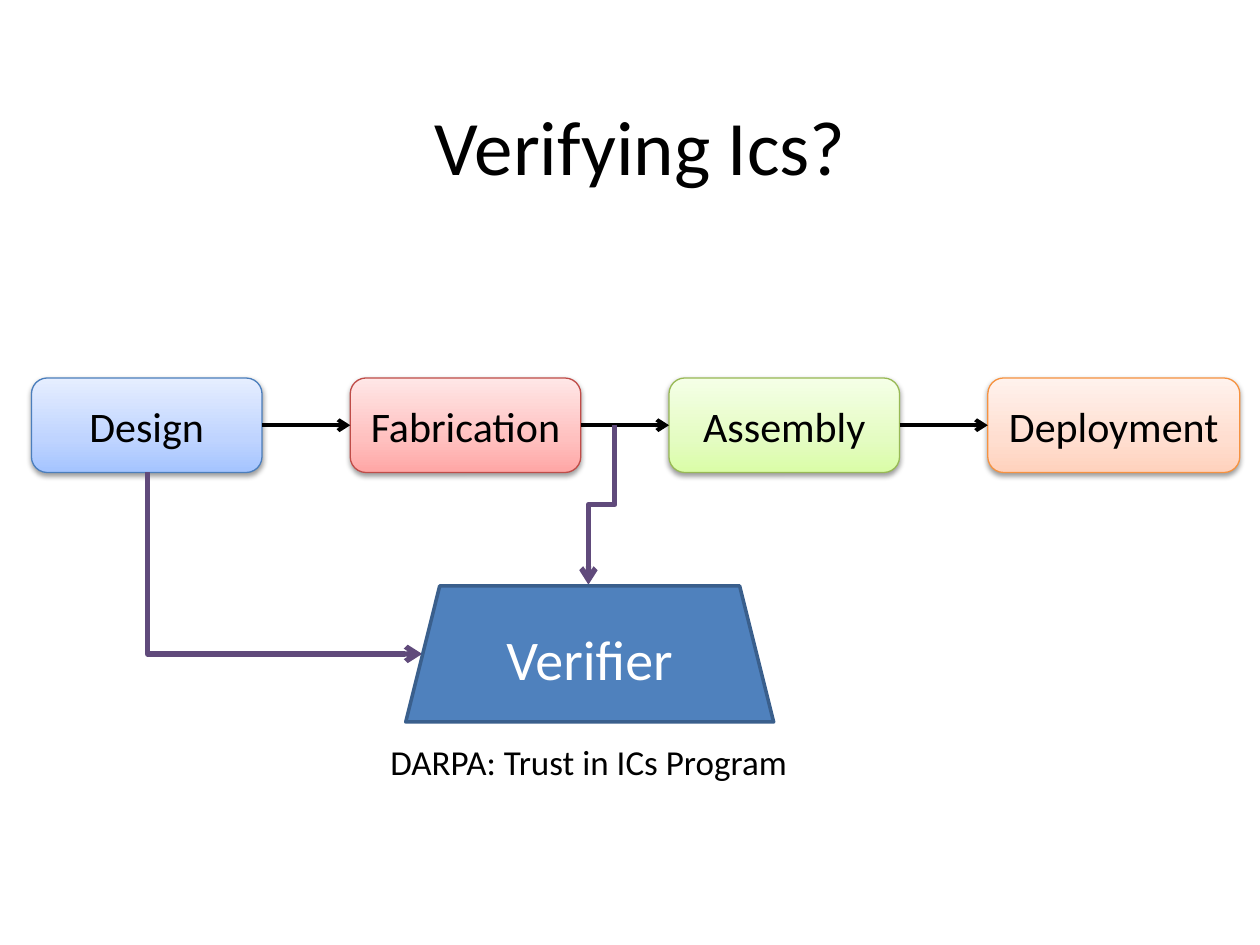
from dataclasses import dataclass

from pptx import Presentation
from pptx.dml.color import RGBColor
from pptx.enum.shapes import MSO_CONNECTOR as CONN, MSO_SHAPE as SHAPE
from pptx.enum.text import MSO_ANCHOR as ANCHOR, PP_ALIGN as ALIGN
from pptx.oxml import parse_xml
from pptx.oxml.ns import nsdecls, qn
from pptx.oxml.xmlchemy import OxmlElement
from pptx.util import Inches, Pt

COLORS = {"text": "000000", "arrow": "000000", "feed": "604A7B",
          "verifier": "4F81BD", "verifier_line": "3A5F8C", "light": "FFFFFF"}
BOX_LEFT, BOX_TOP, BOX_PITCH, BOX_HEIGHT = 0.25, 3, 2.53, 0.75


@dataclass
class Stage:
    name: str
    width: float
    line: str
    shades: tuple[str, str, str]


@dataclass
class Feed:
    preset: str
    left: float
    top: float
    width: float
    height: float
    rotation: int
    flipped: bool


STAGES = [
    Stage("Design", 1.83, "4B7EBC", ("A4C4FF", "BFD4FF", "E6EEFF")),
    Stage("Fabrication", 1.83, "BF4C48", ("FFA6A5", "FFC0BF", "FFE7E7")),
    Stage("Assembly", 1.83, "98B955", ("DAFDA7", "E4FCC2", "F5FFE7")),
    Stage("Deployment", 2, "F69240", ("FFD2BD", "FFDED0", "FFF2ED")),
]
FEEDS = [
    Feed("bentConnector2", 1.54, 3.38, 1.44, 2.18, 270, True),
    Feed("bentConnector3", 4.14, 3.9, 1.27, 0.21, 90, False),
]


def rgb(value: str) -> RGBColor:
    return RGBColor.from_string(value)


def write(sp, text: str, size: int, color: str = COLORS["text"],
          align=ALIGN.CENTER, anchor=ANCHOR.MIDDLE, wrap: bool = True) -> None:
    tf = sp.text_frame
    tf.word_wrap, tf.vertical_anchor = wrap, anchor
    p = tf.paragraphs[0]
    p.alignment = align
    r = p.add_run()
    r.text = text
    for key, value in {"name": "Calibri", "size": Pt(size)}.items():
        setattr(r.font, key, value)
    r.font.color.rgb = rgb(color)


def add_text(s, at: tuple, text: str, size: int, **formats) -> None:
    sp = s.shapes.add_textbox(*map(Inches, at))
    write(sp, text, size, **formats)


def add_box(s, preset, at: tuple, line: str, weight: float):
    sp = s.shapes.add_shape(preset, *map(Inches, at))
    sp.shadow.inherit = False
    sp.line.color.rgb = rgb(line)
    sp.line.width = Pt(weight)
    return sp


def add_stage(s, stage: Stage, left: float):
    sp = add_box(s, SHAPE.ROUNDED_RECTANGLE,
                 (left, BOX_TOP, stage.width, BOX_HEIGHT), stage.line, 0.75)
    stops = "".join(f'<a:gs pos="{pos}"><a:srgbClr val="{shade}"/></a:gs>'
                    for pos, shade in zip((0, 35000, 100000), stage.shades))
    sp.fill.gradient()
    sp.fill.gradient_angle = 90
    grad = sp._element.spPr.find(qn("a:gradFill"))
    grad.replace(grad.find(qn("a:gsLst")),
                 parse_xml(f'<a:gsLst {nsdecls("a")}>{stops}</a:gsLst>'))
    sp._element.spPr.find(qn("a:effectLst")).append(parse_xml(
        f'<a:outerShdw {nsdecls("a")} blurRad="{Pt(3.1)}" dist="{Pt(1.6)}" dir="5400000" '
        'rotWithShape="0"><a:srgbClr val="000000"><a:alpha val="38000"/></a:srgbClr>'
        '</a:outerShdw>'))
    write(sp, stage.name, 24)
    return sp


def style_arrow(c, color: str, weight: float) -> None:
    c.line.color.rgb = rgb(color)
    c.line.width = Pt(weight)
    tail = OxmlElement("a:tailEnd")
    tail.set("type", "arrow")
    c.line._get_or_add_ln().append(tail)
    c._element.spPr.append(OxmlElement("a:effectLst"))


def join(s, first, second) -> None:
    c = s.shapes.add_connector(CONN.STRAIGHT, 0, 0, 0, 0)
    c.begin_connect(first, 3)
    c.end_connect(second, 1)
    style_arrow(c, COLORS["arrow"], 2.25)


def add_feed(s, feed: Feed) -> None:
    x1, x2 = feed.left, feed.left + feed.width
    if feed.flipped:
        x1, x2 = x2, x1
    c = s.shapes.add_connector(CONN.ELBOW, Inches(x1), Inches(feed.top),
                               Inches(x2), Inches(feed.top + feed.height))
    spPr = c._element.spPr
    spPr.find(qn("a:xfrm")).set("rot", str(feed.rotation * 60000))
    spPr.find(qn("a:prstGeom")).set("prst", feed.preset)
    style_arrow(c, COLORS["feed"], 3)


def main() -> None:
    prs = Presentation()
    prs.slide_width, prs.slide_height = Inches(10), Inches(7.5)
    s = prs.slides.add_slide(prs.slide_layouts[6])
    add_text(s, (0.5, 0.3, 9.17, 1.7), "Verifying Ics?", 44)
    boxes = [add_stage(s, stage, BOX_LEFT + i * BOX_PITCH)
             for i, stage in enumerate(STAGES)]
    for first, second in zip(boxes, boxes[1:]):
        join(s, first, second)
    add_text(s, (3, 5.83, 3.38, 0.44), "DARPA: Trust in ICs Program", 20,
             align=ALIGN.LEFT, anchor=ANCHOR.TOP, wrap=False)
    for feed in FEEDS:
        add_feed(s, feed)
    verifier = add_box(s, SHAPE.TRAPEZOID, (3.22, 4.65, 2.92, 1.08),
                       COLORS["verifier_line"], 2)
    verifier.fill.solid()
    verifier.fill.fore_color.rgb = rgb(COLORS["verifier"])
    write(verifier, "Verifier", 32, COLORS["light"])
    prs.save("out.pptx")


if __name__ == "__main__":
    main()
